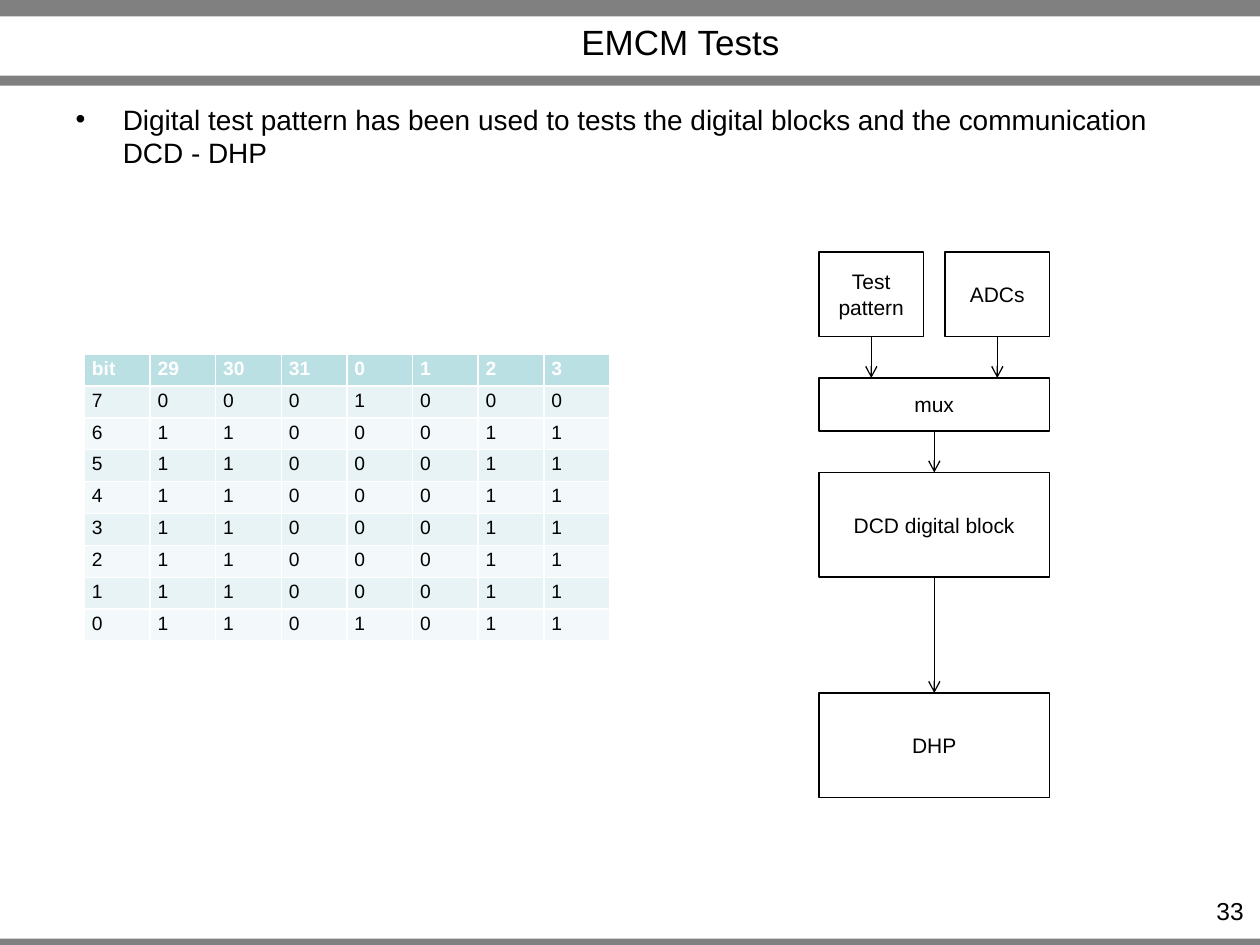
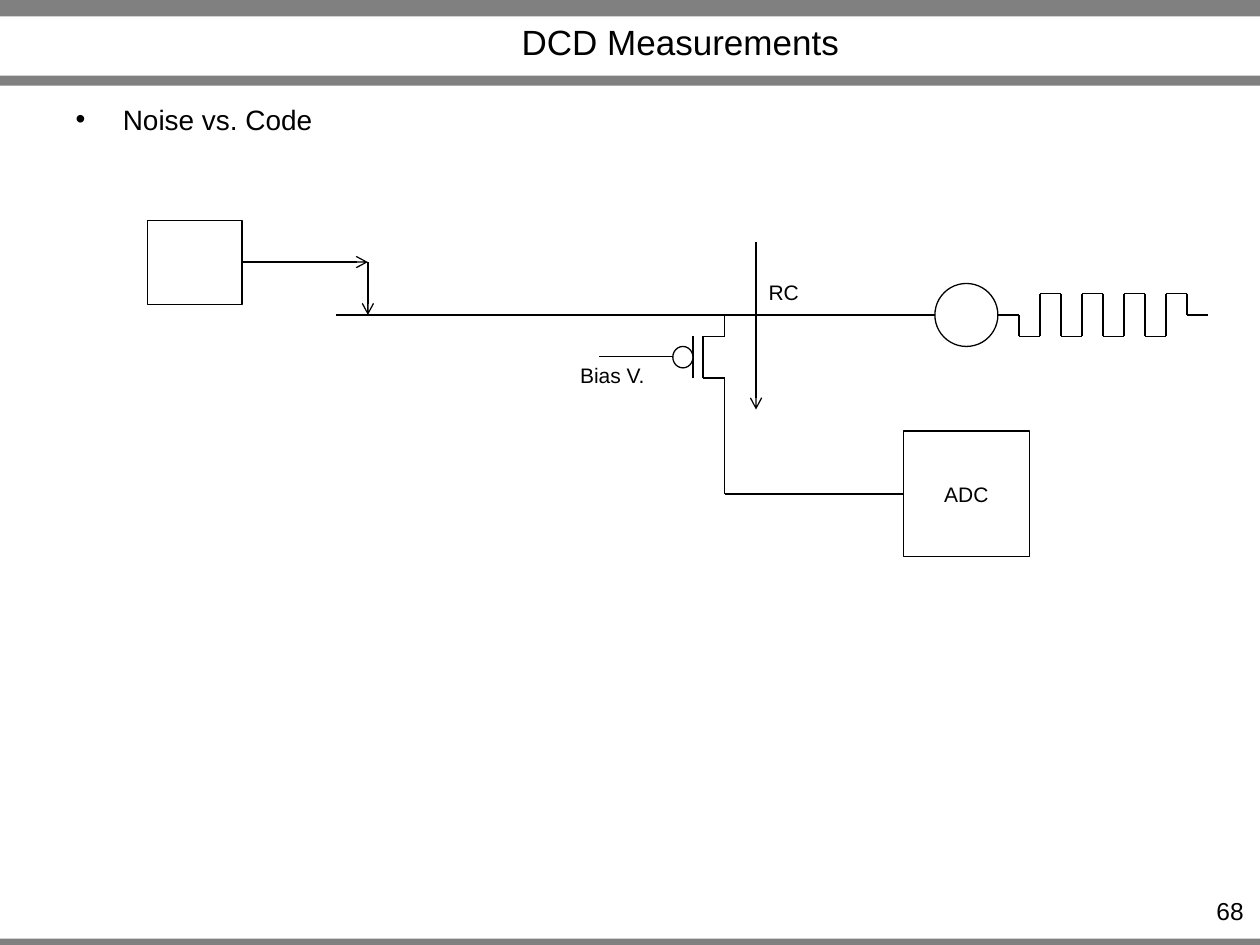
from dataclasses import dataclass
from itertools import pairwise

from lxml.etree import SubElement
from pptx import Presentation
from pptx.dml.color import RGBColor
from pptx.enum.shapes import MSO_CONNECTOR, MSO_SHAPE
from pptx.enum.text import MSO_ANCHOR, MSO_AUTO_SIZE, PP_ALIGN
from pptx.oxml.ns import qn
from pptx.util import Inches, Pt


@dataclass(frozen=True)
class Theme:
    face: str = "Arial"
    ink: str = "000000"
    paper: str = "FFFFFF"
    band: str = "808080"
    head: str = "BBE0E3"
    rows: tuple = ("E7F3F4", "F3F9FA")
    title: int = 20
    body: int = 16
    page: int = 14
    label: int = 12
    cell: int = 11
    line: float = 0.75


LOOK = Theme()

# Shared frame: left, top, width, height
BANDS = [(0, 7.45, 10, 0.08), (0, 0, 10, 0.13), (0, 0.6, 10, 0.08)]
TITLE = (1.3, 0.14, 8.2, 0.38)
BODY = (0.5, 0.76, 9, 1.08)
PAGE = (9.1, 7.06, 0.87, 0.24)

# Slide 1 content
TESTS = {
    "title": "EMCM Tests",
    "point": "Digital test pattern has been used to tests the digital blocks "
             "and the communication DCD - DHP",
    "page": "33",
}
BITS = [
    ("bit", "29", "30", "31", "0", "1", "2", "3"),
    (7, 0, 0, 0, 1, 0, 0, 0),
    *[(bit, 1, 1, 0, 0, 0, 1, 1) for bit in range(6, 0, -1)],
    (0, 1, 1, 0, 1, 0, 1, 1),
]
GRID = (0.67, 2.81, 4.17, 2.28)
INPUTS = [("Test pattern", 6.5), ("ADCs", 7.5)]
IN_TOP, IN_W, IN_H = 2, 0.83, 0.67
STAGES = [("mux", 3, 0.42), ("DCD digital block", 3.75, 0.83), ("DHP", 5.5, 0.83)]
STAGE_X, STAGE_W = 6.5, 1.83

# Slide 2 content
NOISE = {"title": "DCD Measurements", "point": "Noise vs. Code", "page": "68"}
BUS = 2.5
WIRES = [
    [(5.75, 3.17), (5.75, 3), (5.58, 3), (5.58, 2.67), (5.75, 2.67), (5.75, BUS)],
    [(5.5, 3), (5.5, 2.67)],
    [(5.5, 2.83), (4.75, 2.83)],
    [(7.42, BUS), (2.67, BUS)],
    [(5.75, 3.08), (5.75, 3.92), (7.17, 3.92)],
]
ARROWS = [
    [(1.92, 2.08), (2.92, 2.08), (2.92, BUS)],
    [(6, 1.92), (6, 3.25)],
]
BOXES = [("", (1.17, 1.75, 0.75, 0.67)), ("ADC", (7.17, 3.42, 1, 1))]
GATE = (5.34, 2.75, 0.16, 0.17)
SOURCE = (7.42, 2.25, 0.5, 0.5)
LABELS = [("Bias V.", (4.5, 2.83, 0.72, 0.3)), ("RC", (6, 2.17, 0.44, 0.3))]
WAVE_X, STEP, SWING, PULSES = 7.92, 1 / 6, 0.17, 4


# Helpers
def paint(part, tone):
    part.solid()
    part.fore_color.rgb = RGBColor.from_string(tone)


def assign(item, **vals):
    for key, val in vals.items():
        setattr(item, key, val)


def place(shape, area):
    sides = ("left", "top", "width", "height")
    assign(shape, **dict(zip(sides, map(Inches, area))))


def write(frame, text, size, tone=LOOK.ink, align=PP_ALIGN.CENTER, bold=False):
    frame.text = text
    para = frame.paragraphs[0]
    assign(para, alignment=align, space_before=Pt(0))
    assign(para.font, name=LOOK.face, size=Pt(size), bold=bold)
    para.font.color.rgb = RGBColor.from_string(tone)


def draw(slide, area, kind=MSO_SHAPE.RECTANGLE, text="", fill=None):
    shape = slide.shapes.add_shape(kind, *map(Inches, area))
    shape.shadow.inherit = False
    if fill:
        paint(shape.fill, fill)
    else:
        shape.fill.background()
    paint(shape.line.fill, LOOK.ink)
    shape.line.width = Pt(LOOK.line)
    if text:
        assign(shape.text_frame, word_wrap=True, vertical_anchor=MSO_ANCHOR.MIDDLE)
        write(shape.text_frame, text, LOOK.label)
    return shape


def trace(slide, points, arrow=False):
    for start, end in pairwise(points):
        ends = map(Inches, (*start, *end))
        wire = slide.shapes.add_connector(MSO_CONNECTOR.STRAIGHT, *ends)
        paint(wire.line.fill, LOOK.ink)
        wire.line.width = Pt(LOOK.line)
        if arrow:
            SubElement(wire.line._get_or_add_ln(), qn("a:tailEnd"), type="arrow")
        SubElement(wire.element.spPr, qn("a:effectLst"))


def note(slide, area, text, size, align=PP_ALIGN.CENTER, wrap=False):
    box = slide.shapes.add_textbox(*map(Inches, area))
    box.text_frame.word_wrap = wrap
    write(box.text_frame, text, size, align=align)


def frame(deck, layout):
    """Move the grey bands onto the layout that all slides share."""
    slide = deck.slides[0]
    for index, area in enumerate(BANDS):
        band = draw(slide, area, fill=LOOK.band)
        band.line.fill.background()
        band.element.nvSpPr.cNvPr.set("id", str(20 + index))
        layout.shapes.element.append(band.element)


def begin(deck, layout, words):
    slide = deck.slides.add_slide(layout)
    title, body = slide.shapes.title, slide.placeholders[1]
    parts = [
        (title, TITLE, "title", LOOK.title, PP_ALIGN.CENTER, MSO_ANCHOR.MIDDLE),
        (body, BODY, "point", LOOK.body, PP_ALIGN.LEFT, MSO_ANCHOR.TOP),
    ]
    for shape, area, key, size, align, anchor in parts:
        place(shape, area)
        assign(shape.text_frame, word_wrap=True, vertical_anchor=anchor,
               auto_size=MSO_AUTO_SIZE.NONE)
        write(shape.text_frame, words[key], size, align=align)
    note(slide, PAGE, words["page"], LOOK.page, PP_ALIGN.RIGHT, True)
    return slide


# Slide 1: bit table and data flow
def table(slide):
    rows, cols = len(BITS), len(BITS[0])
    grid = slide.shapes.add_table(rows, cols, *map(Inches, GRID)).table
    pad, edge = Inches(0.06), Inches(0.03)
    for y, row in enumerate(BITS):
        top = y == 0
        fill = LOOK.head if top else LOOK.rows[(y - 1) % 2]
        tone = LOOK.paper if top else LOOK.ink
        for x, value in enumerate(row):
            cell = grid.cell(y, x)
            assign(cell, margin_left=pad, margin_right=pad,
                   margin_top=edge, margin_bottom=edge)
            paint(cell.fill, fill)
            write(cell.text_frame, str(value), LOOK.cell, tone, PP_ALIGN.LEFT, top)


def flow(slide):
    for text, left in INPUTS:
        draw(slide, (left, IN_TOP, IN_W, IN_H), text=text)
        mid = left + IN_W / 2
        trace(slide, [(mid, IN_TOP + IN_H), (mid, STAGES[0][1])], True)
    for text, top, high in STAGES:
        draw(slide, (STAGE_X, top, STAGE_W, high), text=text)
    mid = STAGE_X + STAGE_W / 2
    for (_, top, high), (_, below, _) in pairwise(STAGES):
        trace(slide, [(mid, top + high), (mid, below)], True)


# Slide 2: noise circuit
def wave():
    low, high = BUS + SWING, BUS - SWING
    points = [(0, BUS)]
    for pulse in range(PULSES):
        x = 1 + 2 * pulse
        points += [(x, BUS), (x, low), (x + 1, low), (x + 1, high), (x + 2, high)]
    last = 1 + 2 * PULSES
    points += [(last, BUS), (last + 1, BUS)]
    return [(WAVE_X + x * STEP, y) for x, y in points]


def circuit(slide):
    for wire in [*WIRES, wave()]:
        trace(slide, wire)
    for wire in ARROWS:
        trace(slide, wire, True)
    draw(slide, GATE, MSO_SHAPE.OVAL, fill=LOOK.paper)
    draw(slide, SOURCE, MSO_SHAPE.OVAL)
    for text, area in BOXES:
        draw(slide, area, text=text)
    for text, area in LABELS:
        note(slide, area, text, LOOK.label)


def main():
    deck = Presentation()
    assign(deck, slide_width=Inches(10), slide_height=Inches(7.5))
    layout = deck.slide_layouts[1]
    tests = begin(deck, layout, TESTS)
    frame(deck, layout)
    table(tests)
    flow(tests)
    circuit(begin(deck, layout, NOISE))
    deck.save("out.pptx")


if __name__ == "__main__":
    main()
